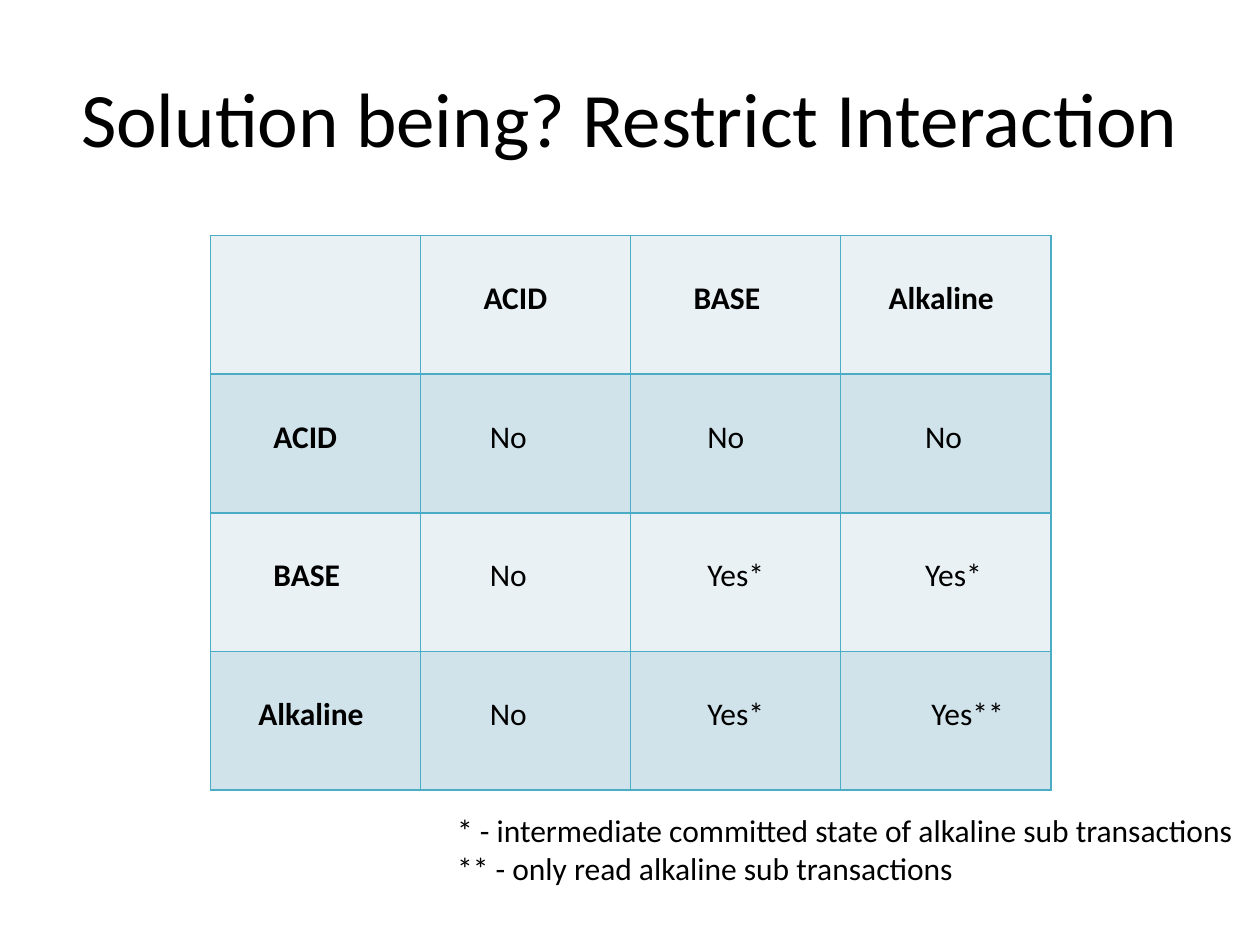
import pptx
import pptx.util
import pptx.dml.color
import pptx.enum.text
import pptx.oxml.ns
import lxml.etree

Inches = pptx.util.Inches
Pt = pptx.util.Pt

COLORS = {"text": "000000", "border": "4BACC6", "light": "E9F1F5", "dark": "D0E3EA"}
MODELS = ["ACID", "BASE", "Alkaline"]
ANSWERS = [
    ["No", "No", "No"],
    ["No", "Yes*", "Yes*"],
    ["No", "Yes*", "Yes**"],
]
FOOTNOTES = [
    "* - intermediate committed state of alkaline sub transactions",
    "** - only read alkaline sub transactions",
]
# Left insets in inches: by model for headings, by column for answers
HEADING_INSETS = {"ACID": 0.5, "BASE": 0.5, "Alkaline": 0.38}
ANSWER_INSETS = [0.55, 0.61, 0.67]
READ_ONLY_INSET = 0.72


def rgb(name):
    return pptx.dml.color.RGBColor.from_string(COLORS[name])


def format_text(paragraph, size, bold=False):
    font = paragraph.font if not paragraph.runs else paragraph.runs[0].font
    for attribute, value in {"name": "Calibri", "size": Pt(size), "bold": bold}.items():
        setattr(font, attribute, value)
    font.color.rgb = rgb("text")


def add_title(slide, wording):
    title = slide.shapes.title
    place = {"left": 0.5, "top": 0.3, "width": 9, "height": 1.25}
    for attribute, value in place.items():
        setattr(title, attribute, Inches(value))
    title.text_frame.text = wording
    title.text_frame.vertical_anchor = pptx.enum.text.MSO_ANCHOR.MIDDLE
    paragraph = title.text_frame.paragraphs[0]
    paragraph.alignment = pptx.enum.text.PP_ALIGN.CENTER
    format_text(paragraph, 44)


def add_borders(cell):
    qn = pptx.oxml.ns.qn
    properties = cell._tc.get_or_add_tcPr()
    for side in ("a:lnL", "a:lnR", "a:lnT", "a:lnB"):
        line = lxml.etree.SubElement(properties, qn(side), w=str(Pt(1)))
        fill = lxml.etree.SubElement(line, qn("a:solidFill"))
        lxml.etree.SubElement(fill, qn("a:srgbClr"), val=COLORS["border"])


def fill_cell(cell, wording, inset, bold, band):
    add_borders(cell)
    cell.fill.solid()
    cell.fill.fore_color.rgb = rgb(band)
    cell.margin_left = Inches(inset)
    cell.margin_top = Inches(0.35)
    cell.margin_right = Inches(0.05)
    cell.text_frame.text = wording
    format_text(cell.text_frame.paragraphs[0], 18, bold)


def add_interaction_table(slide):
    rows = [[""] + MODELS]
    rows += [[model] + answers for model, answers in zip(MODELS, ANSWERS)]
    count = len(rows)
    table = slide.shapes.add_table(
        count, count, Inches(1.67), Inches(1.87), Inches(6.67), Inches(4.4)
    ).table
    table.first_row = False
    table.horz_banding = False
    for r, row in enumerate(rows):
        for c, wording in enumerate(row):
            heading = r == 0 or c == 0
            if heading:
                inset = HEADING_INSETS.get(wording, 0.1)
            elif wording == "Yes**":
                inset = READ_ONLY_INSET
            else:
                inset = ANSWER_INSETS[c - 1]
            band = "dark" if r % 2 else "light"
            fill_cell(table.cell(r, c), wording, inset, heading, band)


def add_footnotes(slide):
    frame = slide.shapes.add_textbox(
        Inches(3.53), Inches(6.39), Inches(6.46), Inches(0.71)
    ).text_frame
    frame.word_wrap = False
    frame.auto_size = pptx.enum.text.MSO_AUTO_SIZE.SHAPE_TO_FIT_TEXT
    frame.text = "\n".join(FOOTNOTES)
    for paragraph in frame.paragraphs:
        format_text(paragraph, 18)


def main():
    deck = pptx.Presentation()
    deck.slide_width = Inches(10)
    deck.slide_height = Inches(7.5)
    slide = deck.slides.add_slide(deck.slide_layouts[5])  # title only

    add_title(slide, "Solution being? Restrict Interaction")
    add_interaction_table(slide)
    add_footnotes(slide)
    deck.save("out.pptx")


if __name__ == "__main__":
    main()
